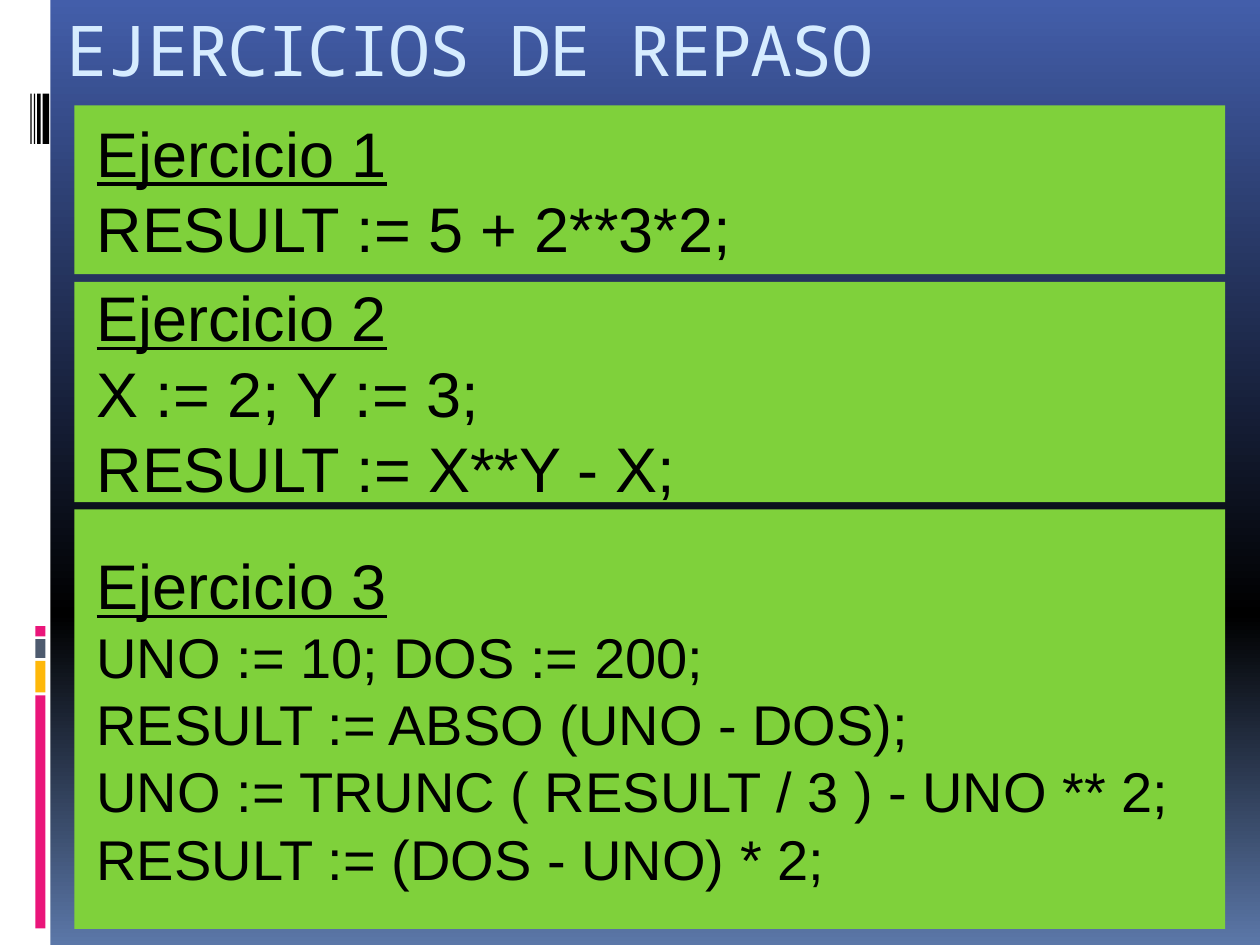
from copy import deepcopy
from dataclasses import dataclass

from pptx import Presentation
from pptx.dml.color import RGBColor
from pptx.enum.shapes import MSO_SHAPE
from pptx.enum.text import MSO_ANCHOR, PP_ALIGN
from pptx.oxml.ns import qn
from pptx.util import Pt


@dataclass(frozen=True)
class Theme:
    backdrop: tuple = ((0, "435EAA"), (0.65, "000000"), (1, "5B77A8"))
    white: str = "FFFFFF"
    black: str = "000000"
    pink: str = "EA157A"
    amber: str = "FEB80A"
    slate: str = "4E5B6F"
    green: str = "7FD13B"
    title_color: str = "D6ECFF"
    title_font: str = "Noto Sans Mono"
    body_font: str = "Arial"
    title_size: int = 40
    heading_size: int = 36


@dataclass(frozen=True)
class Bar:
    left: float
    top: float
    width: float
    height: float
    color: str


@dataclass(frozen=True)
class Exercise:
    number: int
    top: float
    height: float
    lines: tuple
    size: int = 36


THEME = Theme()

# Left rail: white strip, coloured blocks, barcode
BLOCKS = [
    Bar(20.16, top, 5.8, height, color)
    for top, height, color in (
        (397.4, 133.2, THEME.pink),
        (377.7, 18, THEME.amber),
        (365.2, 10.8, THEME.slate),
        (357.8, 5.8, THEME.pink),
    )
]
BARCODE = [
    Bar(left, 53.5, width, 28.8, THEME.black)
    for left, width in ((24.4, 3.7), (21.2, 2), (19.4, 0.8), (17.4, 0.7))
]
RAIL = [Bar(0, 0, 28.8, 540, THEME.white), *BLOCKS, *BARCODE]

EXERCISES = [
    Exercise(1, 60.2, 96.4, ("RESULT := 5 + 2**3*2;",)),
    Exercise(2, 161.1, 125.9, ("X := 2; Y := 3;", "RESULT := X**Y - X;")),
    Exercise(3, 291.1, 239.7, (
        "UNO := 10; DOS := 200;",
        "RESULT := ABSO (UNO - DOS);",
        "UNO := TRUNC ( RESULT / 3 ) - UNO ** 2;",
        "RESULT := (DOS - UNO) * 2;",
    ), size=32),
]


def paint_background(page) -> None:
    fill = page.background.fill
    fill.gradient()
    fill.gradient_angle = 270
    stop_list = page.element.find(".//" + qn("a:gsLst"))
    stop_list.append(deepcopy(stop_list[0]))
    for stop, (position, color) in zip(fill.gradient_stops, THEME.backdrop):
        stop.position = position
        stop.color.rgb = RGBColor.from_string(color)


def add_bar(page, bar: Bar):
    shape = page.shapes.add_shape(
        MSO_SHAPE.RECTANGLE, Pt(bar.left), Pt(bar.top), Pt(bar.width), Pt(bar.height))
    shape.shadow.inherit = False
    shape.fill.solid()
    shape.fill.fore_color.rgb = RGBColor.from_string(bar.color)
    shape.line.fill.background()
    return shape


def add_span(para, text: str, font: str, size: int, color: str, underline: bool = False):
    span = para.add_run()
    span.text = text
    span.font.name = font
    span.font.size = Pt(size)
    span.font.color.rgb = RGBColor.from_string(color)
    span.font.underline = underline
    return span


def add_title(page, text: str) -> None:
    box = page.shapes.add_textbox(Pt(31), Pt(0), Pt(612), Pt(72))
    frame = box.text_frame
    frame.word_wrap = True
    frame.margin_top = Pt(4)
    span = add_span(frame.paragraphs[0], text, THEME.title_font,
                    THEME.title_size, THEME.title_color)
    span.font._element.set("spc", "-100")


def add_exercise(page, exercise: Exercise) -> None:
    box = add_bar(page, Bar(42.5, exercise.top, 657.7, exercise.height, THEME.green))
    frame = box.text_frame
    frame.word_wrap = True
    frame.vertical_anchor = MSO_ANCHOR.MIDDLE
    frame.margin_left = Pt(12.7)
    rows = [(f"Ejercicio {exercise.number}", THEME.heading_size, True)]
    rows += [(line, exercise.size, False) for line in exercise.lines]
    for index, (text, size, underline) in enumerate(rows):
        para = frame.add_paragraph() if index else frame.paragraphs[0]
        para.alignment = PP_ALIGN.LEFT
        add_span(para, text, THEME.body_font, size, THEME.black, underline)


def main() -> None:
    deck = Presentation()
    deck.slide_width, deck.slide_height = Pt(720), Pt(540)
    page = deck.slides.add_slide(deck.slide_layouts[6])
    paint_background(page)
    for bar in RAIL:
        add_bar(page, bar)
    add_title(page, "EJERCICIOS DE REPASO")
    for exercise in EXERCISES:
        add_exercise(page, exercise)
    deck.save("out.pptx")


if __name__ == "__main__":
    main()
